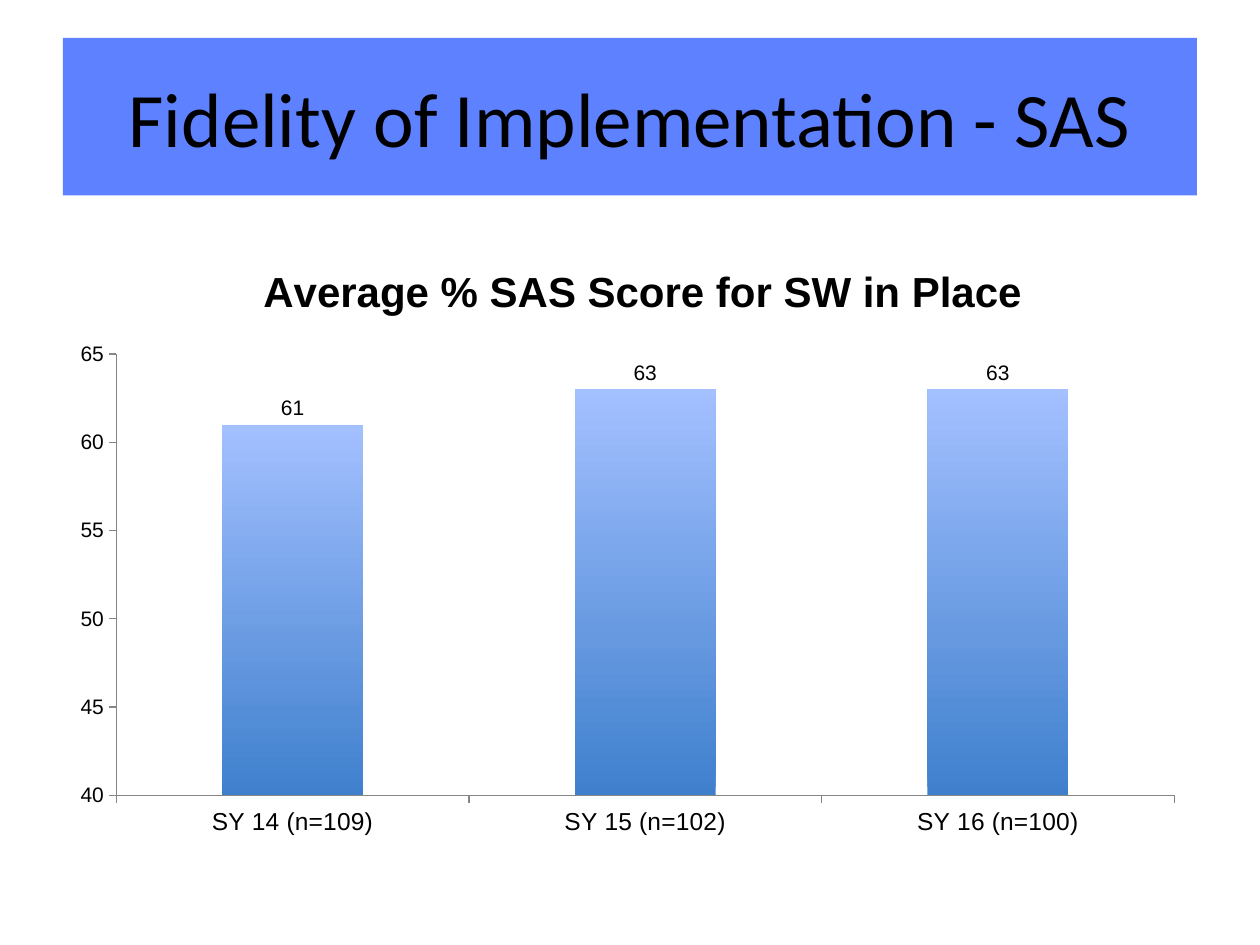
import pptx
import pptx.chart.data
import pptx.dml.color
import pptx.enum.chart
import pptx.enum.shapes
import pptx.enum.text
import pptx.oxml
import pptx.oxml.ns
import pptx.util

Pt = pptx.util.Pt
COLOURS = {
    "banner": "5D81FF",
    "text": "000000",
    "axis": "868686",
    "bar_bottom": "3F80CD",
    "bar_top": "A3C0FF",
}


def colour(name):
    return pptx.dml.color.RGBColor.from_string(COLOURS[name])


def apply_format(target, values):
    for name, value in values.items():
        setattr(target, name, value)


class SlideBuilder:
    def __init__(self, page):
        self.page = page

    def style_font(self, font, name, size, bold=False):
        apply_format(font, {"name": name, "size": Pt(size), "bold": bold})
        font.color.rgb = colour("text")

    def banner(self, text, left, top, width, height):
        box = self.page.shapes.add_shape(
            pptx.enum.shapes.MSO_SHAPE.RECTANGLE,
            Pt(left), Pt(top), Pt(width), Pt(height))
        box.shadow.inherit = False
        box.fill.solid()
        box.fill.fore_color.rgb = colour("banner")
        box.line.fill.background()
        apply_format(box.text_frame, {
            "word_wrap": True,
            "vertical_anchor": pptx.enum.text.MSO_ANCHOR.MIDDLE,
            "margin_left": Pt(7.2), "margin_right": Pt(7.2),
            "margin_top": Pt(3.6), "margin_bottom": Pt(3.6),
        })
        para = box.text_frame.paragraphs[0]
        para.alignment = pptx.enum.text.PP_ALIGN.CENTER
        span = para.add_run()
        span.text = text
        self.style_font(span.font, "Calibri", 44)

    def set_layout(self, parent, index, values):
        tag = pptx.oxml.ns.qn("c:layout")
        existing = parent.find(tag)
        if existing is not None:
            parent.remove(existing)
        settings = "".join(f'<c:{key} val="{value}"/>' for key, value in values.items())
        parent.insert(index, pptx.oxml.parse_xml(
            f'<c:layout {pptx.oxml.ns.nsdecls("c")}>'
            f"<c:manualLayout>{settings}</c:manualLayout></c:layout>"))

    def style_axis(self, axis, size):
        apply_format(axis, {
            "has_major_gridlines": False,
            "major_tick_mark": pptx.enum.chart.XL_TICK_MARK.OUTSIDE,
            "minor_tick_mark": pptx.enum.chart.XL_TICK_MARK.NONE,
        })
        axis.format.line.color.rgb = colour("axis")
        axis.format.line.width = Pt(0.75)
        self.style_font(axis.tick_labels.font, "Arial", size)

    def column_chart(self, title, categories, values, left, top, width, height):
        data = pptx.chart.data.CategoryChartData()
        data.categories = categories
        data.add_series(title, values)
        chart = self.page.shapes.add_chart(
            pptx.enum.chart.XL_CHART_TYPE.COLUMN_CLUSTERED,
            Pt(left), Pt(top), Pt(width), Pt(height), data).chart
        self.style_font(chart.font, "Arial", 10)
        apply_format(chart, {"has_legend": False, "has_title": True})

        heading = chart.chart_title
        heading.include_in_layout = False
        span = heading.text_frame.paragraphs[0].add_run()
        span.text = title
        self.style_font(span.font, "Arial", 24, bold=True)
        self.set_layout(heading._element, 1, {
            "xMode": "edge", "yMode": "edge", "x": 0.17, "y": 0.06})

        self.style_axis(chart.category_axis, 14)
        self.style_axis(chart.value_axis, 12)
        apply_format(chart.value_axis, {
            "minimum_scale": 40, "maximum_scale": 65, "major_unit": 5})

        plot = chart.plots[0]
        apply_format(plot, {
            "gap_width": 150, "vary_by_categories": False, "has_data_labels": True})
        apply_format(plot.data_labels, {
            "show_value": True,
            "position": pptx.enum.chart.XL_LABEL_POSITION.OUTSIDE_END,
        })
        self.style_font(plot.data_labels.font, "Arial", 12)
        fill = plot.series[0].format.fill
        fill.gradient()
        fill.gradient_angle = 90
        for stop, name in zip(fill.gradient_stops, ("bar_bottom", "bar_top")):
            stop.color.rgb = colour(name)

        plot_area = chart._chartSpace.chart.plotArea
        self.set_layout(plot_area, 0, {
            "layoutTarget": "inner", "xMode": "edge", "yMode": "edge",
            "x": 0.047, "y": 0.213, "w": 0.933, "h": 0.698})


def main():
    deck = pptx.Presentation()
    apply_format(deck, {"slide_width": Pt(720), "slide_height": Pt(540)})
    builder = SlideBuilder(deck.slides.add_slide(deck.slide_layouts[6]))
    builder.banner("Fidelity of Implementation - SAS", 36, 21.6, 648, 90)
    builder.column_chart(
        "Average % SAS Score for SW in Place",
        ["SY 14 (n=109)", "SY 15 (n=102)", "SY 16 (n=100)"],
        [61, 63, 63], 36, 125.28, 648, 361.44)
    deck.save("out.pptx")


if __name__ == "__main__":
    main()
